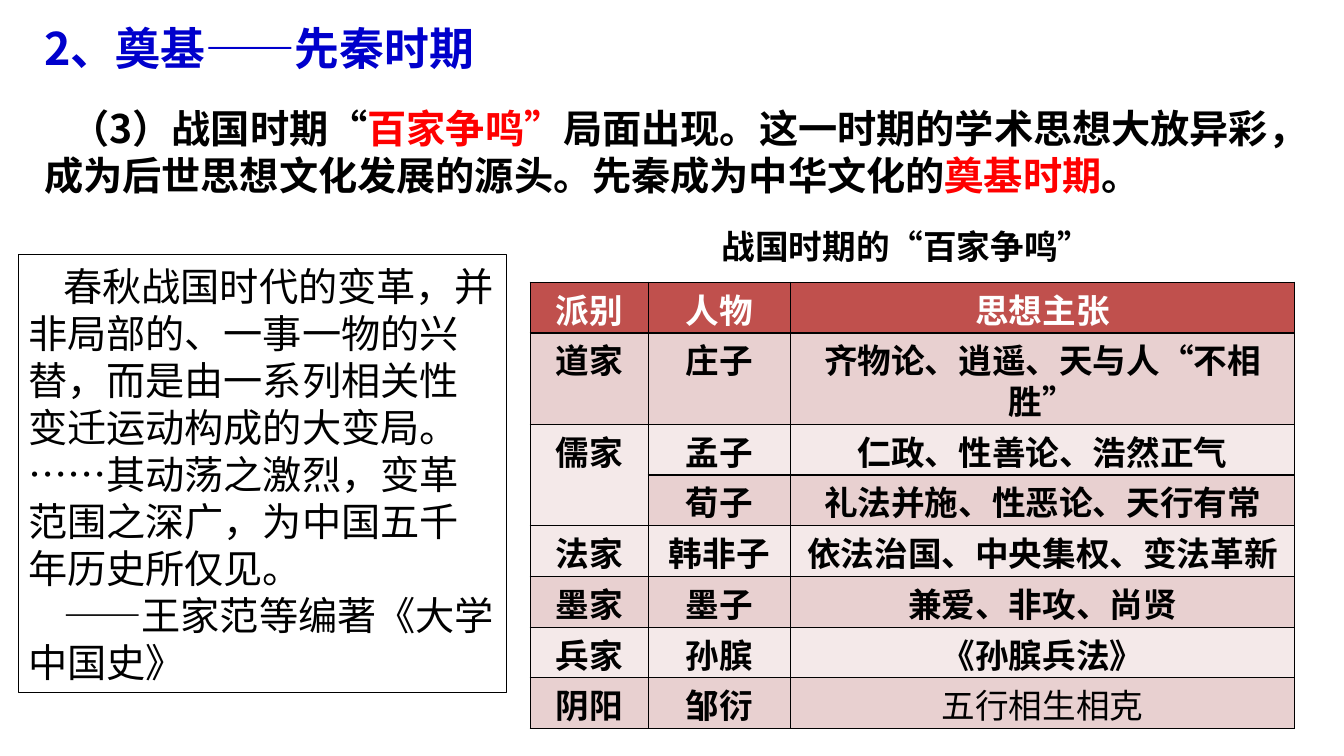
import dataclasses
import typing

import lxml.etree
import pptx
import pptx.dml.color
import pptx.enum.lang
import pptx.enum.shapes
import pptx.enum.text
import pptx.oxml.ns
import pptx.util

Inches = pptx.util.Inches
Pt = pptx.util.Pt


@dataclasses.dataclass(frozen=True)
class Theme:
    text_font: str = "Noto Sans CJK SC"
    table_font: str = "Calibri"
    black: str = "000000"
    white: str = "FFFFFF"
    blue: str = "0000CC"
    red: str = "FF0000"
    header_fill: str = "C0504D"
    dark_band: str = "E8D0D0"
    light_band: str = "F4E9E9"
    title_size: int = 32
    body_size: int = 28
    table_size: int = 24
    line_ratio: float = 1.2
    table_line: int = 29


THEME = Theme()


class Run(typing.NamedTuple):
    text: str
    color: str | None = None


@dataclasses.dataclass(frozen=True)
class TextBlock:
    left: float
    top: float
    width: float
    height: float
    paragraphs: list[list[Run]]
    size: int
    color: str = THEME.black
    bold: bool = True
    indent: float = 0
    framed: bool = False


class School(typing.NamedTuple):
    name: str
    thinker: str
    ideas: str


TEXT_BLOCKS = [
    TextBlock(
        0.34, 0.99, 12.68, 1.04,
        [[
            Run("（3）战国时期“"),
            Run("百家争鸣”", THEME.red),
            Run("局面出现。这一时期的学术思想大放异彩，成为后世思想文化发展的源头。先秦成为中华文化的"),
            Run("奠基时期", THEME.red),
            Run("。"),
        ]],
        THEME.body_size, indent=0.26,
    ),
    TextBlock(
        0.18, 2.53, 4.84, 4.34,
        [
            [Run("春秋战国时代的变革，并非局部的、一事一物的兴替，而是由一系列相关性变迁运动构成的大变局。"
                 "……其动荡之激烈，变革范围之深广，为中国五千年历史所仅见。")],
            [Run("——王家范等编著《大学中国史》")],
        ],
        THEME.body_size, bold=False, indent=0.35, framed=True,
    ),
    TextBlock(7.06, 2.19, 4.15, 0.5, [[Run("战国时期的“百家争鸣”")]], THEME.table_size),
    TextBlock(0.34, 0.16, 8.79, 0.64, [[Run("2、奠基——先秦时期")]], THEME.title_size, THEME.blue),
]

# An empty name continues the school above
SCHOOLS = [
    School("派别", "人物", "思想主张"),
    School("道家", "庄子", "齐物论、逍遥、天与人“不相胜”"),
    School("儒家", "孟子", "仁政、性善论、浩然正气"),
    School("", "荀子", "礼法并施、性恶论、天行有常"),
    School("法家", "韩非子", "依法治国、中央集权、变法革新"),
    School("墨家", "墨子", "兼爱、非攻、尚贤"),
    School("兵家", "孙膑", "《孙膑兵法》"),
    School("阴阳", "邹衍", "五行相生相克"),
]
COLUMN_WIDTHS = [1.17, 1.41, 5.0]
ROW_HEIGHTS = [0.5, 0.9] + [0.5] * 6


def rgb(color: str) -> pptx.dml.color.RGBColor:
    return pptx.dml.color.RGBColor.from_string(color)


def style_paragraph(paragraph, size: int, color: str, bold: bool, latin_font: str) -> None:
    font = paragraph.font
    font.size = Pt(size)
    font.bold = bold
    font.name = latin_font
    font.color.rgb = rgb(color)
    font.language_id = pptx.enum.lang.MSO_LANGUAGE_ID.SIMPLIFIED_CHINESE
    defaults = paragraph._p.pPr.find(pptx.oxml.ns.qn("a:defRPr"))
    lxml.etree.SubElement(defaults, pptx.oxml.ns.qn("a:ea"), typeface=THEME.text_font)


def draw_text_block(slide, block: TextBlock) -> None:
    bounds = [Inches(length) for length in (block.left, block.top, block.width, block.height)]
    if block.framed:
        shape = slide.shapes.add_shape(pptx.enum.shapes.MSO_SHAPE.RECTANGLE, *bounds)
        shape.shadow.inherit = False
        shape.fill.background()
        shape.line.color.rgb = rgb(THEME.black)
        shape.line.width = Pt(0.75)
    else:
        shape = slide.shapes.add_textbox(*bounds)
    frame = shape.text_frame
    frame.word_wrap = True
    frame.auto_size = pptx.enum.text.MSO_AUTO_SIZE.SHAPE_TO_FIT_TEXT
    frame.margin_top = Inches(0.05)
    for index, runs in enumerate(block.paragraphs):
        paragraph = frame.add_paragraph() if index else frame.paragraphs[0]
        paragraph.alignment = pptx.enum.text.PP_ALIGN.LEFT
        paragraph.line_spacing = Pt(block.size * THEME.line_ratio)
        style_paragraph(paragraph, block.size, block.color, block.bold, THEME.text_font)
        paragraph._p.pPr.set("indent", str(Inches(block.indent)))
        for part in runs:
            run = paragraph.add_run()
            run.text = part.text
            if part.color:
                run.font.color.rgb = rgb(part.color)


def style_cell(cell, fill: str) -> None:
    properties = cell._tc.get_or_add_tcPr()
    for side in ("lnL", "lnR", "lnT", "lnB"):
        border = lxml.etree.SubElement(properties, pptx.oxml.ns.qn(f"a:{side}"), w=str(Pt(1)))
        solid = lxml.etree.SubElement(border, pptx.oxml.ns.qn("a:solidFill"))
        lxml.etree.SubElement(solid, pptx.oxml.ns.qn("a:srgbClr"), val=THEME.black)
    cell.fill.solid()
    cell.fill.fore_color.rgb = rgb(fill)
    cell.margin_top = Inches(0.1)
    cell.margin_bottom = 0


def draw_school_table(slide) -> None:
    table = slide.shapes.add_table(
        len(SCHOOLS), len(COLUMN_WIDTHS), Inches(5.26), Inches(2.8),
        Inches(sum(COLUMN_WIDTHS)), Inches(sum(ROW_HEIGHTS)),
    ).table
    table.first_row = table.horz_banding = False
    for column, width in zip(table.columns, COLUMN_WIDTHS):
        column.width = Inches(width)

    last_row = len(SCHOOLS) - 1
    for row, school in enumerate(SCHOOLS):
        table.rows[row].height = Inches(ROW_HEIGHTS[row])
        band = THEME.dark_band if row % 2 else THEME.light_band
        fill = band if row else THEME.header_fill
        color = THEME.black if row else THEME.white
        latin_font = THEME.text_font if row == last_row else THEME.table_font
        for column, text in enumerate(school):
            cell = table.cell(row, column)
            style_cell(cell, fill)
            if not text:
                table.cell(row - 1, column).merge(cell)
                continue
            paragraph = cell.text_frame.paragraphs[0]
            paragraph.add_run().text = text
            paragraph.alignment = pptx.enum.text.PP_ALIGN.CENTER
            paragraph.line_spacing = Pt(THEME.table_line)
            bold = (row, column) != (last_row, 2)
            style_paragraph(paragraph, THEME.table_size, color, bold, latin_font)


def main() -> None:
    presentation = pptx.Presentation()
    presentation.slide_width = Inches(13.33)
    presentation.slide_height = Inches(7.5)
    slide = presentation.slides.add_slide(presentation.slide_layouts[6])

    # Title, statement, quotation and table caption
    for block in TEXT_BLOCKS:
        draw_text_block(slide, block)

    # Schools of thought
    draw_school_table(slide)
    presentation.save("out.pptx")


if __name__ == "__main__":
    main()
